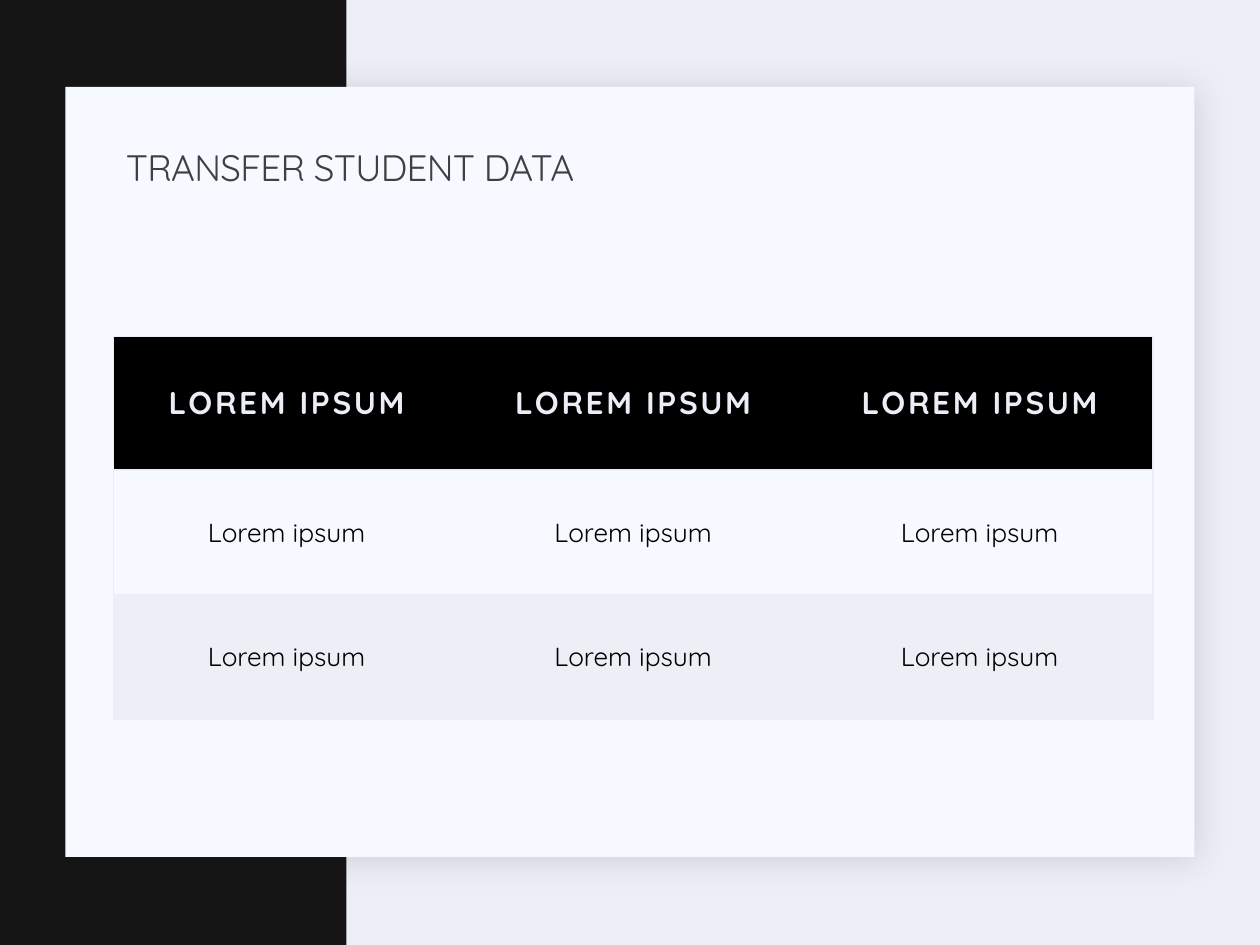
import lxml.etree
import pptx
import pptx.dml.color
import pptx.enum.shapes
import pptx.enum.text
import pptx.oxml.ns
import pptx.util

Inches = pptx.util.Inches
Pt = pptx.util.Pt
RGBColor = pptx.dml.color.RGBColor
qn = pptx.oxml.ns.qn

FONT = "Quicksand"
BACKDROP = RGBColor(0xED, 0xEF, 0xF7)
CHARCOAL = RGBColor(0x14, 0x15, 0x14)
PAPER = RGBColor(0xF6, 0xF9, 0xFF)
SHADE = RGBColor(0x1F, 0x21, 0x25)
BORDER = RGBColor(0xEC, 0xEE, 0xF7)
BLACK = RGBColor(0, 0, 0)
TITLE_GREY = RGBColor(0x40, 0x40, 0x40)


def add_xml(parent, tag, **attributes):
    """Append a DrawingML child element and return it."""
    child = lxml.etree.SubElement(parent, qn(tag))
    for name, value in attributes.items():
        child.set(name, str(value))
    return child


def add_span(para, text, size, color, bold=False, spacing=0):
    """Add one styled run, with letter spacing in points."""
    span = para.add_run()
    span.text = text
    span.font.name = FONT
    span.font.size = Pt(size)
    span.font.bold = bold
    span.font.color.rgb = color
    span._r.get_or_add_rPr().set("spc", str(round(spacing * 100)))


def add_panel(page, box, color):
    """Place a plain filled rectangle."""
    panel = page.shapes.add_shape(pptx.enum.shapes.MSO_SHAPE.RECTANGLE, *map(Inches, box))
    panel.shadow.inherit = False
    panel.fill.solid()
    panel.fill.fore_color.rgb = color
    panel.line.fill.background()
    return panel


def add_card(page, box):
    """Place the light card with its soft shadow."""
    card = add_panel(page, box, PAPER)
    effects = card._element.spPr.find(qn("a:effectLst"))
    shadow = add_xml(effects, "a:outerShdw", blurRad=Pt(20), dist=Pt(2),
                     dir=45 * 60000, algn="tl", rotWithShape=0)
    add_xml(add_xml(shadow, "a:srgbClr", val=SHADE), "a:alpha", val=15000)


def add_title(page, box, text):
    """Place the slide title."""
    frame = page.shapes.add_textbox(*map(Inches, box)).text_frame
    frame.word_wrap = True
    frame.vertical_anchor = pptx.enum.text.MSO_ANCHOR.MIDDLE
    para = frame.paragraphs[0]
    para.line_spacing = 0.9
    add_span(para, text, 21, TITLE_GREY, spacing=-0.4)


def set_borders(cell, visible):
    """Draw the named sides of a cell and clear the others."""
    properties = cell._tc.get_or_add_tcPr()
    for side in "LRTB":
        line = add_xml(properties, "a:ln" + side, w=Pt(1))
        if side in visible:
            add_xml(add_xml(line, "a:solidFill"), "a:srgbClr", val=BORDER)
        else:
            add_xml(line, "a:noFill")


def add_data_table(page, box, rows, heights, fills):
    """Place the table with a header row and equal columns."""
    count = len(rows[0])
    table = page.shapes.add_table(len(rows), count, *map(Inches, box)).table
    table.first_row = table.horz_banding = False
    for column in table.columns:
        column.width = Inches(box[2] / count)
    for r, texts in enumerate(rows):
        table.rows[r].height = Inches(heights[r])
        for c, text in enumerate(texts):
            cell = table.cell(r, c)
            set_borders(cell, "TB" + "L" * (c == 0) + "R" * (c == count - 1))
            cell.fill.solid()
            cell.fill.fore_color.rgb = fills[r]
            cell.vertical_anchor = pptx.enum.text.MSO_ANCHOR.MIDDLE
            cell.margin_left = cell.margin_right = Inches(0.18)
            cell.margin_top = cell.margin_bottom = Inches(0.18)
            para = cell.text_frame.paragraphs[0]
            para.alignment = pptx.enum.text.PP_ALIGN.CENTER
            if r == 0:
                add_span(para, text, 18, BORDER, bold=True, spacing=1.5)
            else:
                add_span(para, text, 15, BLACK)


def main():
    """Build and save the deck."""
    deck = pptx.Presentation()
    deck.slide_width, deck.slide_height = Inches(10), Inches(7.5)
    page = deck.slides.add_slide(deck.slide_layouts[6])
    page.background.fill.solid()
    page.background.fill.fore_color.rgb = BACKDROP
    add_panel(page, (0, 0, 2.75, 7.5), CHARCOAL)
    add_card(page, (0.52, 0.69, 8.96, 6.11))
    rows = [["LOREM IPSUM"] * 3] + [["Lorem ipsum"] * 3] * 2
    add_data_table(page, (0.9, 2.67, 8.25, 3.04), rows,
                   (1.06, 0.99, 0.99), (BLACK, PAPER, BACKDROP))
    add_title(page, (0.9, 1.03, 8.25, 0.64), "TRANSFER STUDENT DATA")
    deck.save("out.pptx")


if __name__ == "__main__":
    main()
